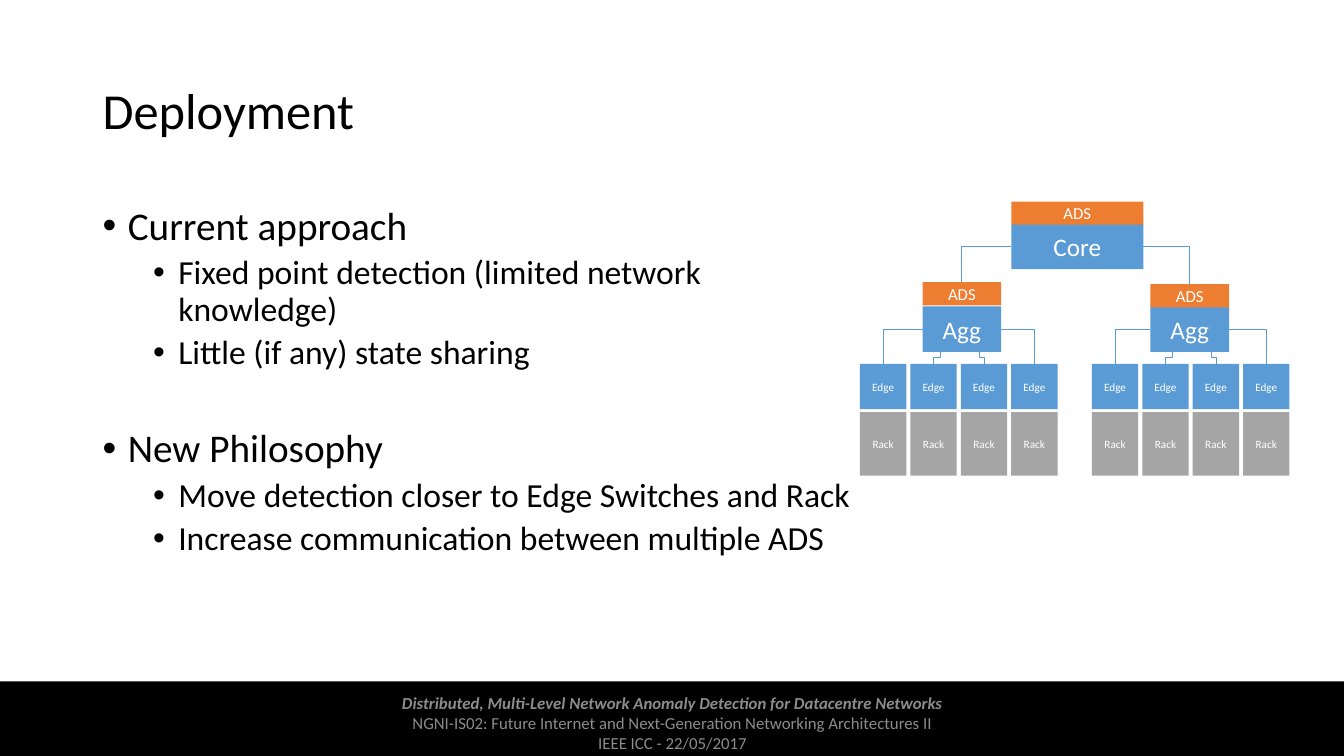
"""Build the Deployment slide with its detection hierarchy diagram."""
from dataclasses import dataclass

import lxml.etree
import pptx
import pptx.dml.color
import pptx.enum.shapes
import pptx.enum.text
import pptx.oxml.ns
import pptx.shapes.autoshape
import pptx.shapes.connector
import pptx.slide
import pptx.text.text
import pptx.util

PX = 9144
FONT = "Calibri"
BLACK = pptx.dml.color.RGBColor(0x00, 0x00, 0x00)
WHITE = pptx.dml.color.RGBColor(0xFF, 0xFF, 0xFF)
FOOTER_GREY = pptx.dml.color.RGBColor(0x8C, 0x8C, 0x8C)
SWITCH_BLUE = pptx.dml.color.RGBColor(0x5B, 0x9B, 0xD5)
RACK_GREY = pptx.dml.color.RGBColor(0xA5, 0xA5, 0xA5)
ADS_ORANGE = pptx.dml.color.RGBColor(0xED, 0x7D, 0x31)

LEFT, CENTER = pptx.enum.text.PP_ALIGN.LEFT, pptx.enum.text.PP_ALIGN.CENTER
TOP, MIDDLE = pptx.enum.text.MSO_ANCHOR.TOP, pptx.enum.text.MSO_ANCHOR.MIDDLE
TOP_SITE, LEFT_SITE, RIGHT_SITE = 0, 1, 3


@dataclass(frozen=True)
class Line:
    text: str
    size: int
    color: pptx.dml.color.RGBColor = BLACK
    align: pptx.enum.text.PP_ALIGN = LEFT
    spacing: float = 1.0
    before: int = 0
    indent: int | None = None
    emphasis: bool = False


@dataclass(frozen=True)
class Area:
    left: int
    top: int
    width: int
    height: int


@dataclass(frozen=True)
class Pod:
    agg_left: int
    ads_top: int
    edge_left: int


def topic(text: str, before: int = 0) -> Line:
    """Describe a first-level bullet."""
    return Line(text, 28, spacing=0.9, before=before, indent=25)


def detail(text: str) -> Line:
    """Describe a second-level bullet."""
    return Line(text, 24, spacing=0.9, before=5, indent=75)


TITLE = [Line("Deployment", 36, spacing=0.9)]
BODY = [
    topic("Current approach"),
    detail("Fixed point detection (limited network knowledge)"),
    detail("Little (if any) state sharing"),
    topic("New Philosophy", before=41),
    detail("Move detection closer to Edge Switches and Rack"),
    detail("Increase communication between multiple ADS"),
]
FOOTER = [
    Line("Distributed, Multi-Level Network Anomaly Detection for Datacentre Networks",
         12, FOOTER_GREY, CENTER, emphasis=True),
    Line("NGNI-IS02: Future Internet and Next-Generation Networking Architectures II",
         12, FOOTER_GREY, CENTER),
    Line("IEEE ICC - 22/05/2017", 12, FOOTER_GREY, CENTER),
]
PODS = [Pod(915, 280, 853), Pod(1141, 282, 1083)]
AGG_TOP, EDGE_TOP, RACK_TOP = 304, 361, 409
SWITCH_HEIGHT, EDGE_WIDTH, EDGE_PITCH, EDGE_COUNT = 45, 46, 50, 4


def place(area: Area) -> tuple[int, int, int, int]:
    """Turn an area in px into EMU."""
    return area.left * PX, area.top * PX, area.width * PX, area.height * PX


def add_bullet(para: pptx.text.text._Paragraph, indent: int) -> None:
    """Give a paragraph a hanging round bullet."""
    properties = para._p.get_or_add_pPr()
    properties.set("marL", str(indent * PX))
    properties.set("indent", str(-25 * PX))
    for tag, key, value in (("a:buFont", "typeface", "Arial"), ("a:buChar", "char", "•")):
        lxml.etree.SubElement(properties, pptx.oxml.ns.qn(tag)).set(key, value)


def write(frame: pptx.text.text.TextFrame, lines: list[Line],
          anchor: pptx.enum.text.MSO_ANCHOR) -> None:
    """Fill a text frame with formatted lines."""
    frame.word_wrap = True
    frame.vertical_anchor = anchor
    for index, line in enumerate(lines):
        para = frame.add_paragraph() if index else frame.paragraphs[0]
        para.alignment = line.align
        para.line_spacing = line.spacing
        para.space_before = pptx.util.Pt(line.before)
        if line.indent is not None:
            add_bullet(para, line.indent)
        span = para.add_run()
        span.text = line.text
        span.font.name = FONT
        span.font.size = pptx.util.Pt(line.size)
        span.font.color.rgb = line.color
        span.font.bold = span.font.italic = line.emphasis


def add_text(page: pptx.slide.Slide, area: Area, lines: list[Line],
             anchor: pptx.enum.text.MSO_ANCHOR = MIDDLE) -> None:
    """Add a wrapped text box."""
    write(page.shapes.add_textbox(*place(area)).text_frame, lines, anchor)


def add_block(page: pptx.slide.Slide, area: Area, fill: pptx.dml.color.RGBColor,
              text: str = "", size: int = 18) -> pptx.shapes.autoshape.Shape:
    """Add a flat rectangle with an optional centred label."""
    box = page.shapes.add_shape(pptx.enum.shapes.MSO_SHAPE.RECTANGLE, *place(area))
    box.shadow.inherit = False
    box.fill.solid()
    box.fill.fore_color.rgb = fill
    box.line.fill.background()
    if text:
        write(box.text_frame, [Line(text, size, WHITE, CENTER)], MIDDLE)
    return box


def add_elbow(page: pptx.slide.Slide, begin_x: int, begin_y: int,
              end_x: int, end_y: int) -> pptx.shapes.connector.Connector:
    """Add a thin elbow connector between points in EMU."""
    link = page.shapes.add_connector(
        pptx.enum.shapes.MSO_CONNECTOR.ELBOW, begin_x, begin_y, end_x, end_y)
    link.line.color.rgb = SWITCH_BLUE
    link.line.width = pptx.util.Pt(0.5)
    lxml.etree.SubElement(link._element.spPr, pptx.oxml.ns.qn("a:effectLst"))
    return link


def add_shoulder(page: pptx.slide.Slide, parent: pptx.shapes.autoshape.Shape, site: int,
                 child: pptx.shapes.autoshape.Shape) -> None:
    """Link the side of a parent to the top of a child with one bend."""
    link = add_elbow(page, 0, 0, 0, 0)
    link.begin_connect(parent, site)
    link.end_connect(child, TOP_SITE)
    geometry = link._element.spPr.find(pptx.oxml.ns.qn("a:prstGeom"))
    geometry.set("prst", "bentConnector2")


def add_drop(page: pptx.slide.Slide, parent: pptx.shapes.autoshape.Shape,
             child: pptx.shapes.autoshape.Shape, shift: int) -> None:
    """Link the bottom of a parent to the top of a child with a vertical step."""
    end_x = child.left + child.width // 2
    begin_x, begin_y = end_x + shift * PX, parent.top + parent.height
    middle_x, middle_y = (begin_x + end_x) // 2, (begin_y + child.top) // 2
    half_run, half_drop = (end_x - begin_x) // 2, (child.top - begin_y) // 2
    link = add_elbow(page, middle_x - half_drop, middle_y + half_run,
                     middle_x + half_drop, middle_y - half_run)
    link._element.spPr.xfrm.set("rot", "5400000")


def add_pod(page: pptx.slide.Slide, pod: Pod, core: pptx.shapes.autoshape.Shape,
            site: int) -> None:
    """Add an aggregation switch with its detector, edges and racks."""
    agg = add_block(page, Area(pod.agg_left, AGG_TOP, 78, SWITCH_HEIGHT), SWITCH_BLUE, "Agg")
    ads = add_block(page, Area(pod.agg_left, pod.ads_top, 78, 23), ADS_ORANGE, "ADS", 12)
    edges = []
    for index in range(EDGE_COUNT):
        left = pod.edge_left + index * EDGE_PITCH
        edges.append(add_block(page, Area(left, EDGE_TOP, EDGE_WIDTH, SWITCH_HEIGHT),
                               SWITCH_BLUE, "Edge", 8))
        add_block(page, Area(left, RACK_TOP, EDGE_WIDTH, 63), RACK_GREY, "Rack", 8)
    add_shoulder(page, core, site, ads)
    add_shoulder(page, agg, LEFT_SITE, edges[0])
    add_shoulder(page, agg, RIGHT_SITE, edges[-1])
    add_drop(page, agg, edges[1], 7)
    add_drop(page, agg, edges[2], -5)


def main() -> None:
    """Build and save the deck."""
    deck = pptx.Presentation()
    deck.slide_width, deck.slide_height = 1333 * PX, 750 * PX
    page = deck.slides.add_slide(deck.slide_layouts[6])
    add_block(page, Area(0, 676, 1333, 74), BLACK)
    add_text(page, Area(92, 40, 1150, 145), TITLE)
    add_text(page, Area(92, 200, 761, 425), BODY, TOP)
    add_text(page, Area(382, 676, 570, 82), FOOTER)
    core = add_block(page, Area(1003, 222, 131, SWITCH_HEIGHT), SWITCH_BLUE, "Core")
    add_block(page, Area(1003, 200, 131, 23), ADS_ORANGE, "ADS", 12)
    for pod, site in zip(PODS, (LEFT_SITE, RIGHT_SITE)):
        add_pod(page, pod, core, site)
    deck.save("out.pptx")


if __name__ == "__main__":
    main()
